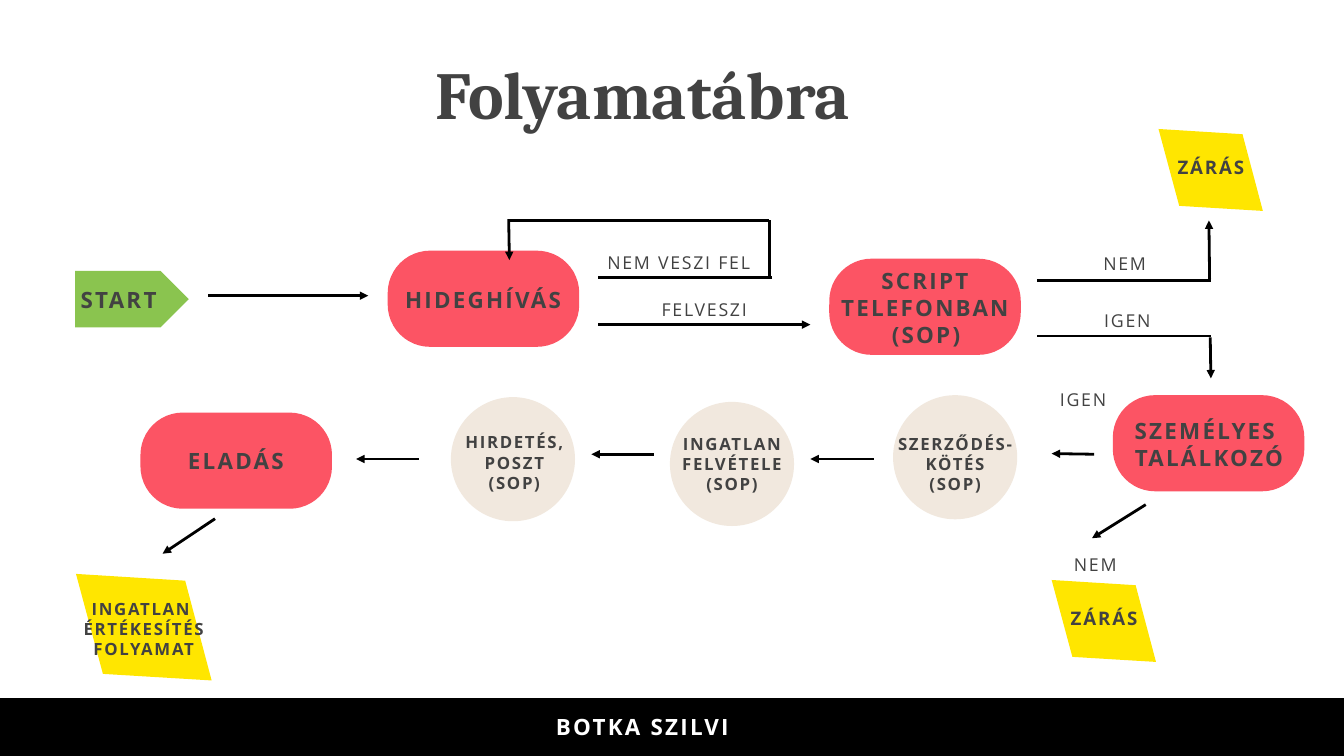
from dataclasses import dataclass
from typing import Optional

from lxml import etree
from pptx import Presentation
from pptx.dml.color import RGBColor
from pptx.enum.shapes import MSO_CONNECTOR, MSO_SHAPE
from pptx.enum.text import PP_ALIGN
from pptx.oxml.ns import qn
from pptx.util import Pt

RECT = MSO_SHAPE.RECTANGLE
PILL = MSO_SHAPE.ROUNDED_RECTANGLE
CIRCLE = MSO_SHAPE.OVAL
PENTAGON = MSO_SHAPE.PENTAGON
STRAIGHT = MSO_CONNECTOR.STRAIGHT
CENTER = PP_ALIGN.CENTER


@dataclass(frozen=True)
class TextStyle:
    size: float
    leading: float
    color: str
    font: str = "Open Sans"
    bold: bool = True
    spacing: float = 0


@dataclass(frozen=True)
class Theme:
    black: str = "000000"
    green: str = "8AC44F"
    red: str = "FC5464"
    beige: str = "F1E8DE"
    yellow: str = "FFE600"
    line_width: float = 3
    title: TextStyle = TextStyle(72, 72, "424242", "Cambria")
    step: TextStyle = TextStyle(24, 28.8, "424242", spacing=2.4)
    end: TextStyle = TextStyle(20, 24, "424242", spacing=2)
    small: TextStyle = TextStyle(18, 21.6, "424242", spacing=1.8)
    branch: TextStyle = TextStyle(19, 22.8, "424242", bold=False, spacing=1.9)
    footer: TextStyle = TextStyle(24, 28.8, "FFFFFF", spacing=2.4)


THEME = Theme()


@dataclass(frozen=True)
class Block:
    kind: int
    left: float
    top: float
    width: float
    height: float
    fill: str
    adjust: Optional[float] = None


@dataclass(frozen=True)
class Slanted:
    left: float
    top: float
    scale: float = 1


@dataclass(frozen=True)
class Line:
    x1: float
    y1: float
    x2: float
    y2: float
    arrow: bool = True


@dataclass(frozen=True)
class Label:
    text: str
    left: float
    top: float
    style: TextStyle
    width: float = 197.3


PILL_SIZE = (205.2, 103)
CIRCLE_SIZE = 133
SLANT_CORNERS = ((0, 0), (90, 5.6), (111.8, 87.8), (22.2, 82.4))

# Filled shapes
PILLS = ((415.4, 268.6), (888.5, 277.2), (1192.3, 423.4), (150.5, 442.1))
CIRCLES = ((956.9, 423.4), (717.8, 430.6), (483.1, 425.5))
BLOCKS = [
    Block(RECT, 0, 748, 1440, 62, THEME.black),
    Block(PENTAGON, 80.6, 290.2, 121.7, 60.5, THEME.green, 0.5),
    *(Block(PILL, x, y, *PILL_SIZE, THEME.red, 0.44) for x, y in PILLS),
    *(Block(CIRCLE, x, y, CIRCLE_SIZE, CIRCLE_SIZE, THEME.beige)
      for x, y in CIRCLES),
]
SLANTED = [
    Slanted(81.4, 614.9, 1.3),
    Slanted(1241.3, 138.2),
    Slanted(1126.8, 621.4),
]

# Flow lines
LINES = [
    Line(223.2, 316.8, 394.6, 316.8),
    Line(640.8, 347.8, 868.3, 347.8),
    # Retry loop back to the cold call
    Line(827.3, 297.4, 640.8, 297.4, False),
    Line(824.4, 298.8, 824.4, 236.2, False),
    Line(824.4, 236.2, 546.5, 236.2, False),
    Line(545, 234.7, 545.8, 278.6),
    # Yes and no branches after the script
    Line(1297.4, 300.2, 1111, 300.2, False),
    Line(1296, 298.8, 1295.3, 236.2),
    Line(1297.4, 360, 1111, 360, False),
    Line(1296.7, 361.4, 1297.4, 405.4),
    # Lower row, right to left
    Line(1172.2, 486.7, 1126.8, 486),
    Line(1227.6, 540.7, 1170, 576.7),
    Line(936, 491.8, 868.3, 491.8),
    Line(700.6, 486.7, 633.6, 486.7),
    Line(448.6, 491.8, 381.6, 491.8),
    Line(230.4, 555.8, 174.2, 593.3),
]

# Texts; each line is a paragraph
LABELS = [
    Label("Folyamatábra", 247.7, 70.6, THEME.title, 882),
    Label("START", 80.6, 306.7, THEME.step, 92.9),
    Label("HIDEGHÍVÁS", 419, 306.7, THEME.step),
    Label("NEM VESZI FEL", 628.6, 269.3, THEME.branch),
    Label("FELVESZI", 655.9, 319.7, THEME.branch),
    Label("SCRIPT TELEFONBAN (SOP)", 893.5, 286.6, THEME.step),
    Label(" NEM", 1103, 271.4, THEME.branch),
    Label(" IGEN", 1105.9, 331.9, THEME.branch),
    Label("ZÁRÁS", 1198.8, 167, THEME.end),
    Label("SZEMÉLYES \nTALÁLKOZÓ", 1196.6, 447.1, THEME.step),
    Label(" IGEN", 1058.4, 416.9, THEME.branch),
    Label(" NEM", 1071.4, 593.3, THEME.branch),
    Label("ZÁRÁS", 1084.3, 650.2, THEME.end),
    Label("SZERZŐDÉS-\nKÖTÉS\n(SOP)", 956.9, 464.4, THEME.small, CIRCLE_SIZE),
    Label("INGATLAN\nFELVÉTELE\n(SOP)", 717.8, 464.4, THEME.small, CIRCLE_SIZE),
    Label("HIRDETÉS,\nPOSZT\n(SOP)", 484.6, 463, THEME.small, CIRCLE_SIZE),
    Label("ELADÁS", 154.1, 479.5, THEME.step),
    Label("INGATLAN \nÉRTÉKESÍTÉS\nFOLYAMAT", 55.4, 641.5, THEME.small),
    Label("BOTKA SZILVI", 483.1, 763.9, THEME.footer, 410.4),
]


def paint(sp, color: str) -> None:
    sp.shadow.inherit = False
    sp.fill.solid()
    sp.fill.fore_color.rgb = RGBColor.from_string(color)
    sp.line.fill.background()


def draw_block(s, b: Block) -> None:
    sp = s.shapes.add_shape(b.kind, Pt(b.left), Pt(b.top), Pt(b.width), Pt(b.height))
    if b.adjust is not None:
        sp.adjustments[0] = b.adjust
    paint(sp, b.fill)


def draw_slanted(s, d: Slanted) -> None:
    corners = [(Pt(d.left + x * d.scale), Pt(d.top + y * d.scale))
               for x, y in SLANT_CORNERS]
    outline = s.shapes.build_freeform(*corners[0])
    outline.add_line_segments(corners[1:], close=True)
    paint(outline.convert_to_shape(), THEME.yellow)


def draw_line(s, ln: Line) -> None:
    c = s.shapes.add_connector(STRAIGHT, Pt(ln.x1), Pt(ln.y1), Pt(ln.x2), Pt(ln.y2))
    c.line.width = Pt(THEME.line_width)
    c.line.color.rgb = RGBColor.from_string(THEME.black)
    sp_pr = c.line._get_or_add_ln().getparent()
    if ln.arrow:
        etree.SubElement(sp_pr.find(qn("a:ln")), qn("a:tailEnd"), type="triangle")
    etree.SubElement(sp_pr, qn("a:effectLst"))


def draw_label(s, lb: Label) -> None:
    style = lb.style
    lines = lb.text.split("\n")
    tb = s.shapes.add_textbox(Pt(lb.left), Pt(lb.top), Pt(lb.width),
                              Pt(style.leading * len(lines)))
    tf = tb.text_frame
    tf.word_wrap = True
    tf.margin_left = tf.margin_right = tf.margin_top = tf.margin_bottom = 0
    for i, text in enumerate(lines):
        p = tf.add_paragraph() if i else tf.paragraphs[0]
        p.alignment = CENTER
        p.line_spacing = Pt(style.leading)
        r = p.add_run()
        r.text = text
        r.font.name = style.font
        r.font.size = Pt(style.size)
        r.font.bold = style.bold
        r.font.color.rgb = RGBColor.from_string(style.color)
        if style.spacing:
            r._r.get_or_add_rPr().set("spc", str(round(style.spacing * 100)))


def main() -> None:
    prs = Presentation()
    prs.slide_width, prs.slide_height = Pt(1440), Pt(810)
    s = prs.slides.add_slide(prs.slide_layouts[6])
    for items, draw in ((BLOCKS, draw_block), (SLANTED, draw_slanted),
                        (LINES, draw_line), (LABELS, draw_label)):
        for item in items:
            draw(s, item)
    prs.save("out.pptx")


if __name__ == "__main__":
    main()
